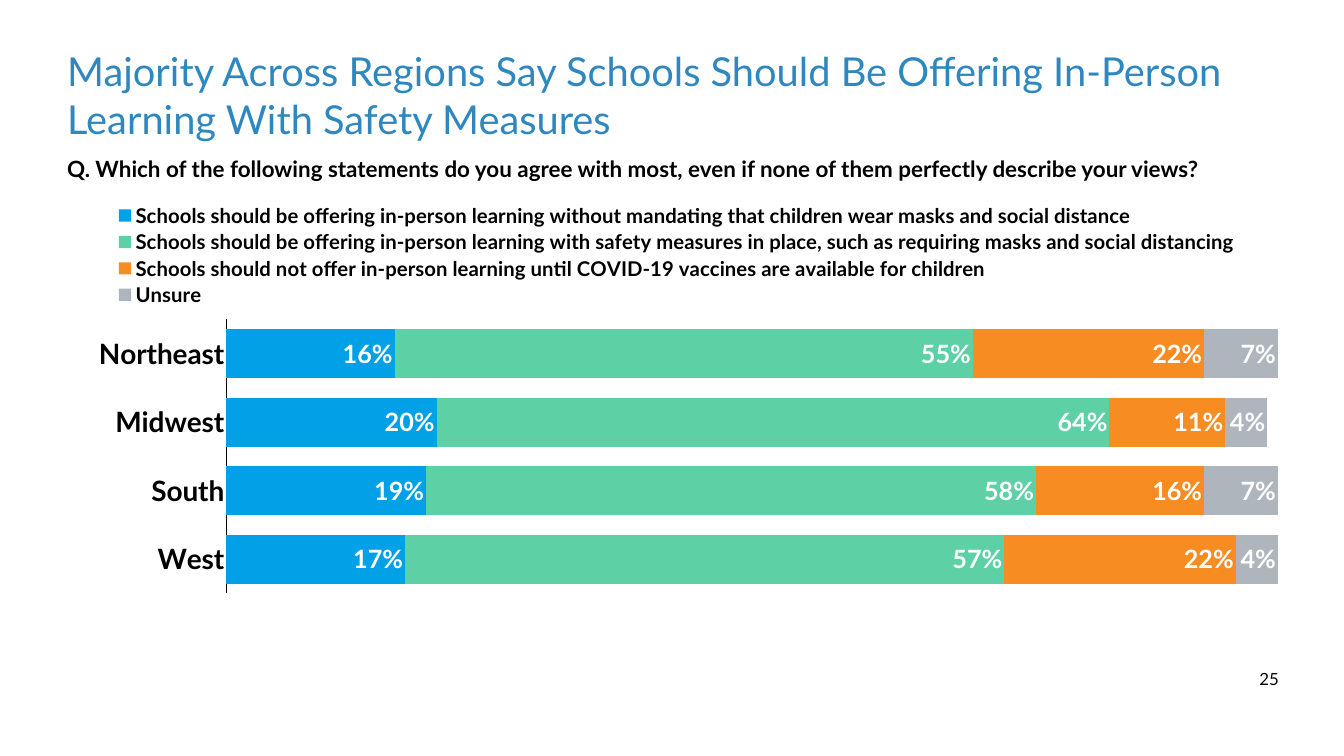
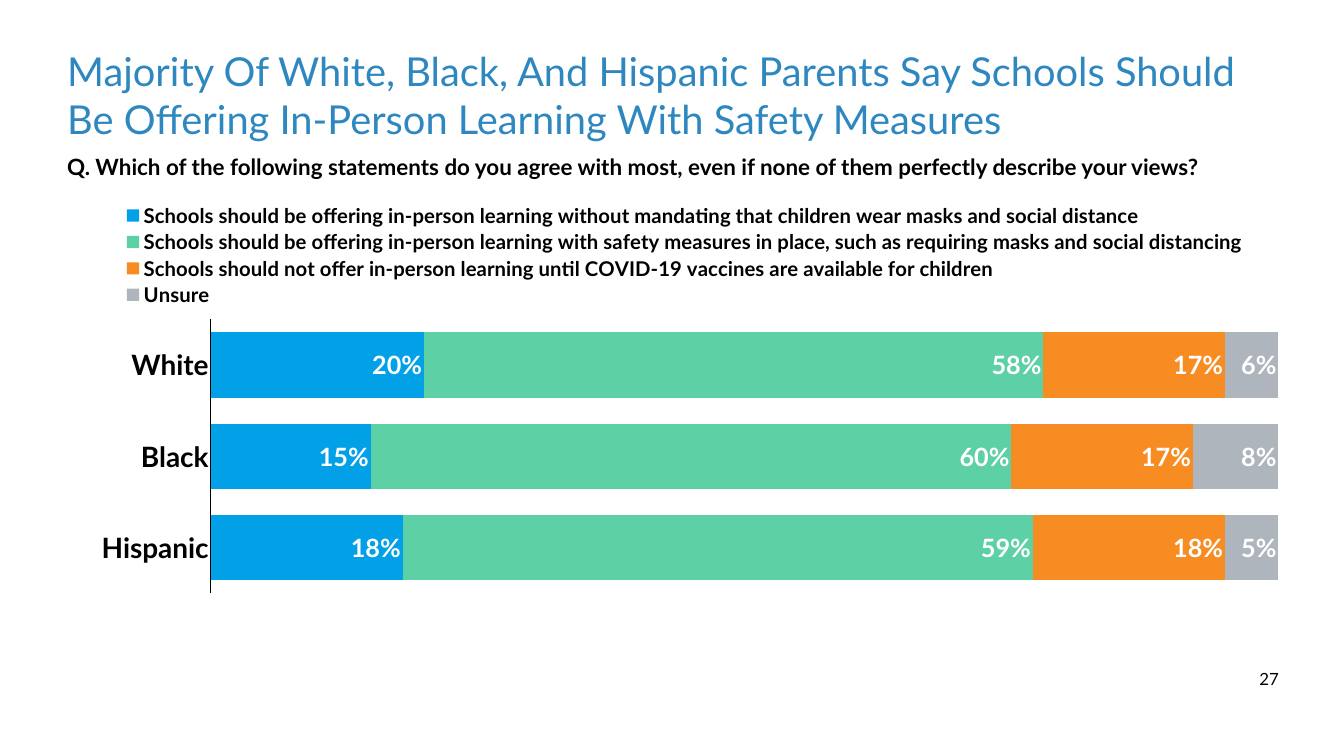
from lxml import etree
from pptx import Presentation
from pptx.chart.data import CategoryChartData
from pptx.dml.color import RGBColor
from pptx.enum.chart import XL_CHART_TYPE, XL_LABEL_POSITION, XL_LEGEND_POSITION, XL_TICK_LABEL_POSITION, XL_TICK_MARK
from pptx.enum.text import MSO_ANCHOR, MSO_AUTO_SIZE, PP_ALIGN
from pptx.oxml.ns import qn
from pptx.util import Pt

STACKED_BAR = XL_CHART_TYPE.BAR_STACKED
INSIDE_END = XL_LABEL_POSITION.INSIDE_END
LEGEND_TOP = XL_LEGEND_POSITION.TOP
NO_LABELS = XL_TICK_LABEL_POSITION.NONE
NO_TICK = XL_TICK_MARK.NONE
TOP, MIDDLE = MSO_ANCHOR.TOP, MSO_ANCHOR.MIDDLE
FIXED = MSO_AUTO_SIZE.NONE
LEFT, CENTER = PP_ALIGN.LEFT, PP_ALIGN.CENTER

FONT = "Lato"
BLACK, WHITE = "000000", "FFFFFF"
TITLE_BLUE = "2E88BF"
INSET = Pt(6)
MARGIN, TEXT_WIDTH = Pt(90), Pt(1740)
TITLE_ONLY = 5

QUESTION = (
    "Q. Which of the following statements do you agree with most, "
    "even if none of them perfectly describe your views?"
)
STATEMENTS = [
    ("Schools should be offering in-person learning without mandating that "
     "children wear masks and social distance", "02A0E7"),
    ("Schools should be offering in-person learning with safety measures in place, "
     "such as requiring masks and social distancing", "5DD0A5"),
    ("Schools should not offer in-person learning until COVID-19 vaccines "
     "are available for children", "F78C22"),
    ("Unsure", "AEB5BC"),
]
FINDINGS = [
    {
        "title": "Majority Across Regions Say Schools Should Be Offering "
                 "In-Person Learning With Safety Measures",
        "page": "25",
        "question_top": 216,
        "chart_left": 78.5,
        "chart_width": 1761,
        "plot_percent": {"x": 13.9, "y": 28.8, "w": 85.3, "h": 66.8},
        "legend_percent": {"x": 4, "y": 0, "w": 93, "h": 26.3},
        "answers": {
            "Northeast": (0.16, 0.55, 0.22, 0.07),
            "Midwest": (0.2, 0.64, 0.11, 0.04),
            "South": (0.19, 0.58, 0.16, 0.07),
            "West": (0.17, 0.57, 0.22, 0.04),
        },
    },
    {
        "title": "Majority Of White, Black, And Hispanic Parents Say Schools Should "
                 "Be Offering In-Person Learning With Safety Measures",
        "page": "27",
        "question_top": 212,
        "chart_left": 53.5,
        "chart_width": 1831.5,
        "plot_percent": {"x": 13.5, "y": 28.8, "w": 83.3, "h": 66.8},
        "legend_percent": {"x": 5.8, "y": 0, "w": 89.5, "h": 26.3},
        "answers": {
            "White": (0.2, 0.58, 0.17, 0.06),
            "Black": (0.15, 0.6, 0.17, 0.08),
            "Hispanic": (0.18, 0.59, 0.18, 0.05),
        },
    },
]


def paint(color_format, hex_color):
    color_format.rgb = RGBColor.from_string(hex_color)


def set_font(font, size, color, bold):
    for attribute, value in {"name": FONT, "size": Pt(size), "bold": bold}.items():
        setattr(font, attribute, value)
    paint(font.color, color)


prs = Presentation()
prs.slide_width, prs.slide_height = Pt(1920), Pt(1080)

for finding in FINDINGS:
    slide = prs.slides.add_slide(prs.slide_layouts[TITLE_ONLY])

    title = slide.shapes.title
    title.left, title.top, title.width, title.height = MARGIN, Pt(60), TEXT_WIDTH, Pt(150)
    question = slide.shapes.add_textbox(MARGIN, Pt(finding["question_top"]), TEXT_WIDTH, Pt(85))
    page_number = slide.shapes.add_textbox(Pt(1788), Pt(949.7), Pt(50), Pt(40.3))

    for holder, words, size, color, bold, align, anchor, wrap in (
        (title, finding["title"], 56.9, TITLE_BLUE, False, LEFT, MIDDLE, True),
        (question, QUESTION, 32, BLACK, True, LEFT, TOP, True),
        (page_number, finding["page"], 24, BLACK, False, CENTER, TOP, False),
    ):
        frame = holder.text_frame
        frame.text = words
        frame_format = {
            "word_wrap": wrap, "auto_size": FIXED, "vertical_anchor": anchor,
            "margin_left": INSET, "margin_right": INSET,
            "margin_top": INSET, "margin_bottom": INSET,
        }
        for attribute, value in frame_format.items():
            setattr(frame, attribute, value)
        paragraph = frame.paragraphs[0]
        paragraph.alignment = align
        set_font(paragraph.runs[0].font, size, color, bold)

    survey = CategoryChartData(number_format="#,##0%")
    survey.categories = list(finding["answers"])
    for (statement, _), shares in zip(STATEMENTS, zip(*finding["answers"].values())):
        survey.add_series(statement, shares)
    chart = slide.shapes.add_chart(
        STACKED_BAR, Pt(finding["chart_left"]), Pt(287.5),
        Pt(finding["chart_width"]), Pt(586), survey,
    ).chart
    chart.has_title = False
    set_font(chart.font, 10, BLACK, False)

    chart.has_legend = True
    legend = chart.legend
    legend.position = LEGEND_TOP
    legend.include_in_layout = True
    set_font(legend.font, 29, BLACK, True)

    groups, shares_axis = chart.category_axis, chart.value_axis
    groups_format = {"reverse_order": True}
    shares_format = {
        "minimum_scale": 0, "maximum_scale": 1, "major_unit": 0.25,
        "tick_label_position": NO_LABELS,
    }
    for axis, size, own_format in ((groups, 40, groups_format), (shares_axis, 34.6, shares_format)):
        shared_format = {
            "has_major_gridlines": False, "major_tick_mark": NO_TICK, "minor_tick_mark": NO_TICK,
        }
        for attribute, value in (shared_format | own_format).items():
            setattr(axis, attribute, value)
        set_font(axis.tick_labels.font, size, BLACK, True)
    paint(groups.format.line.color, BLACK)
    groups.format.line.width = Pt(1)
    shares_axis.format.line.fill.background()

    bars = chart.plots[0]
    bars.gap_width, bars.overlap, bars.vary_by_categories = 40, 100, False
    for series, (_, color) in zip(bars.series, STATEMENTS):
        series.format.fill.solid()
        paint(series.format.fill.fore_color, color)
        labels = series.data_labels
        label_format = {
            "show_value": True, "position": INSIDE_END,
            "number_format": "#,##0%", "number_format_is_linked": False,
        }
        for attribute, value in label_format.items():
            setattr(labels, attribute, value)
        set_font(labels.font, 36, WHITE, True)

    legend_area = legend._element
    plot_area = legend_area.getparent().find(qn("c:plotArea"))
    for area, index, place in (
        (plot_area, 0, finding["plot_percent"]),
        (legend_area, 1, finding["legend_percent"]),
    ):
        for automatic in area.findall(qn("c:layout")):
            area.remove(automatic)
        layout = etree.Element(qn("c:layout"))
        area.insert(index, layout)
        manual = etree.SubElement(layout, qn("c:manualLayout"))
        if area is plot_area:
            etree.SubElement(manual, qn("c:layoutTarget"), val="inner")
        for edge in "xy":
            etree.SubElement(manual, qn(f"c:{edge}Mode"), val="edge")
        for edge, percent in place.items():
            etree.SubElement(manual, qn(f"c:{edge}"), val=str(round(percent / 100, 3)))

prs.save("out.pptx")
